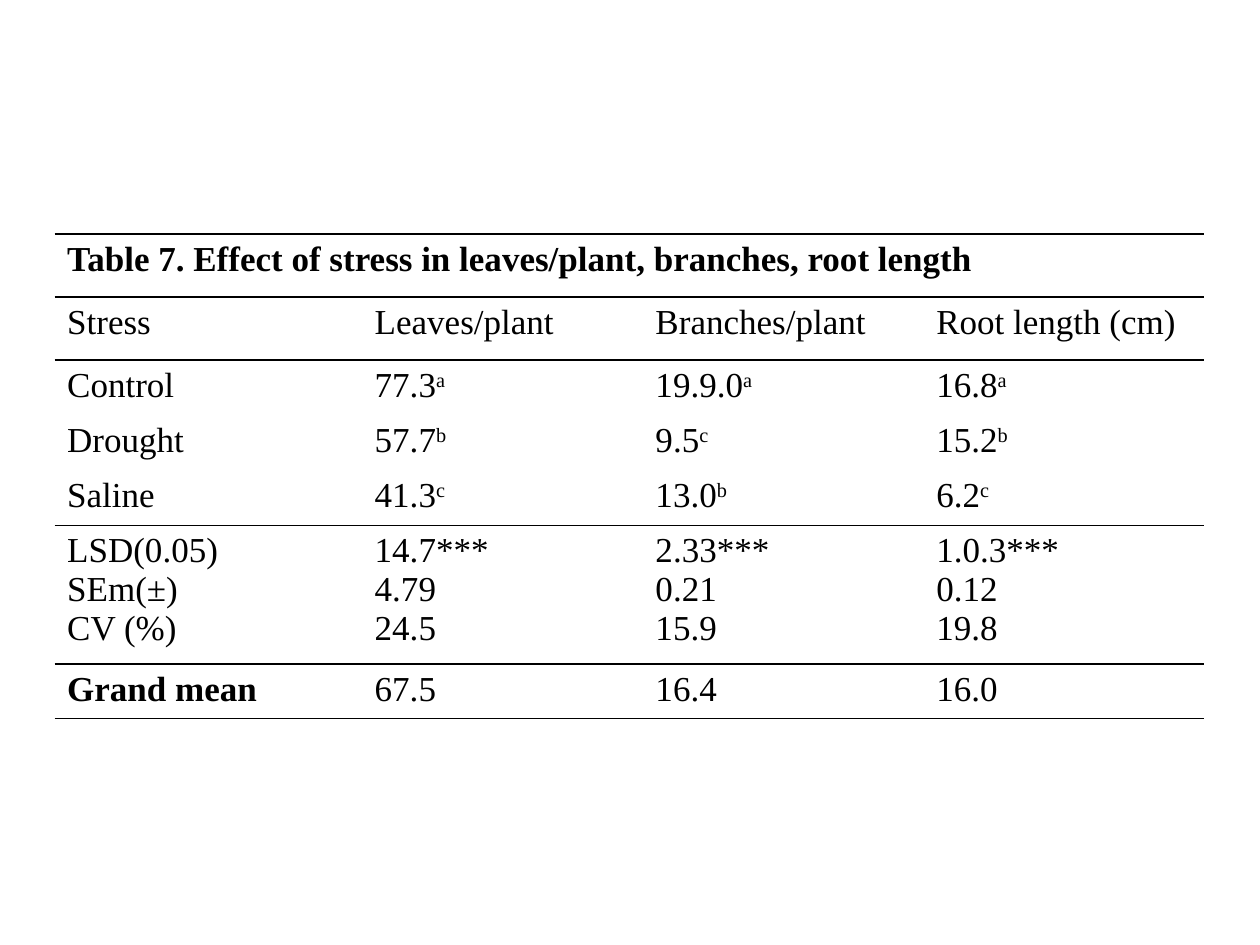
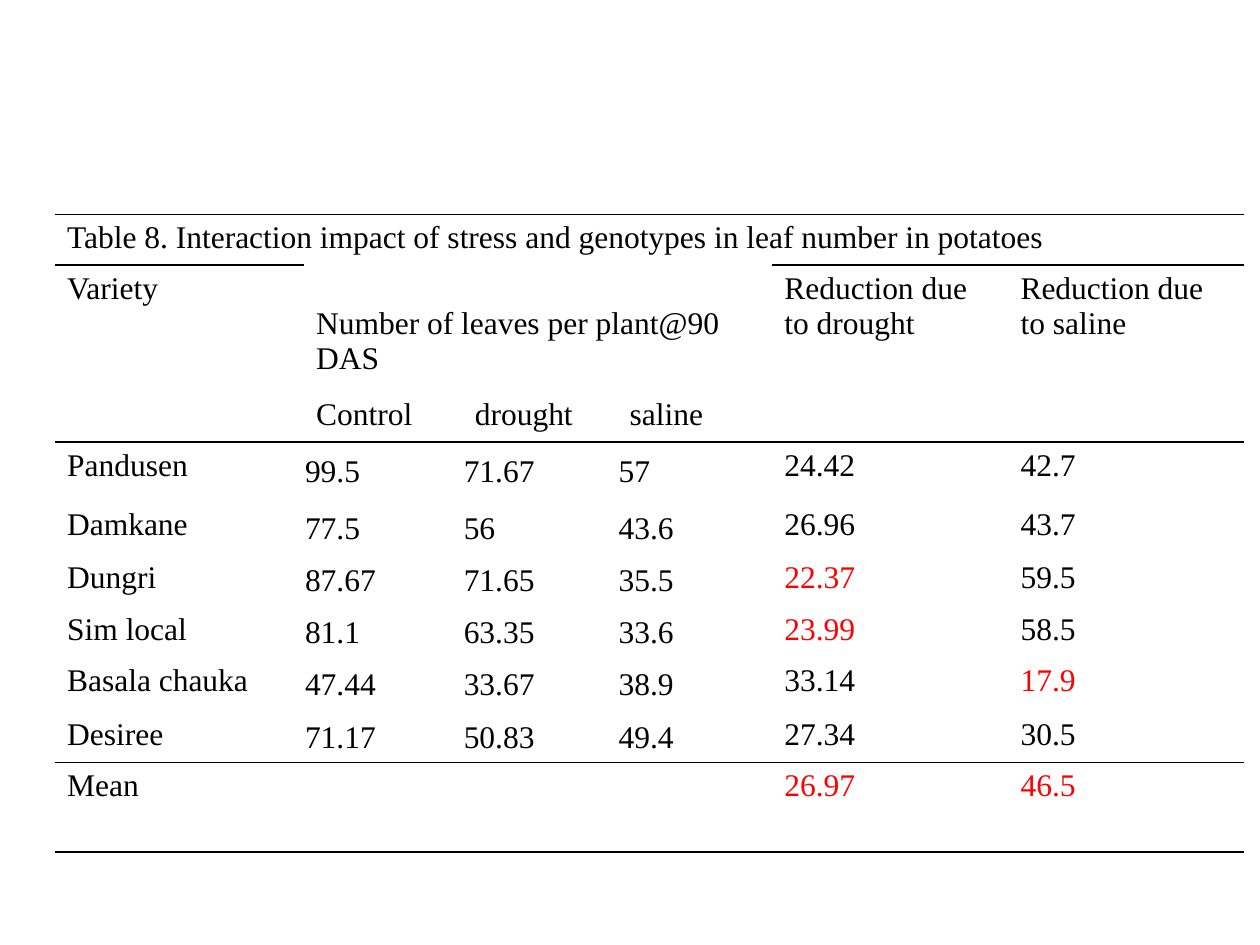
"""Build two slides of ruled result tables on potato stress trials."""
from dataclasses import dataclass, field

from lxml.etree import SubElement
from pptx import Presentation
from pptx.dml.color import RGBColor
from pptx.enum.text import MSO_ANCHOR, PP_ALIGN
from pptx.oxml.ns import qn
from pptx.util import Cm, Pt

FONT = "Times New Roman"
BLACK, RED = "000000", "FF0000"
NO_GRID_STYLE = "{2D5ABB26-0587-4C30-8999-92F81FD0307C}"
LEFT = 1.1


@dataclass
class RuledTable:
    top: float
    size: int
    widths: list[float]
    heights: list[float]
    rows: list[list[str]]
    rules: dict[int, list[int]]
    merges: list[tuple[int, int, int, int]]
    bold: set[tuple[int, int]] = field(default_factory=set)
    red: set[tuple[int, int]] = field(default_factory=set)


def rgb(color: str) -> RGBColor:
    return RGBColor.from_string(color)


def set_borders(cell, drawn: set[str]) -> None:
    tc_pr = cell._tc.get_or_add_tcPr()
    for side in ("lnL", "lnR", "lnT", "lnB"):
        ln = SubElement(tc_pr, qn(f"a:{side}"), w=str(Pt(1)))
        if side in drawn:
            fill = SubElement(ln, qn("a:solidFill"))
            SubElement(fill, qn("a:srgbClr"), val=BLACK)
        else:
            SubElement(ln, qn("a:noFill"))


def write_cell(cell, text: str, size: int, bold: bool, color: str) -> None:
    """Fill a cell, one paragraph per line; a caret starts a superscript."""
    tf = cell.text_frame
    for i, line in enumerate(text.split("\n")):
        p = tf.add_paragraph() if i else tf.paragraphs[0]
        p.font.name, p.font.size, p.font.bold = FONT, Pt(size), bold
        p.font.color.rgb = rgb(color)
        base, _, mark = line.partition("^")
        if base:
            p.add_run().text = base
        if mark:
            r = p.add_run()
            r.text = mark
            r._r.get_or_add_rPr().set("baseline", "30000")


def draw_table(prs, spec: RuledTable):
    s = prs.slides.add_slide(prs.slide_layouts[6])
    sp = s.shapes.add_table(len(spec.heights), len(spec.widths), Cm(LEFT), Cm(spec.top),
                            Cm(sum(spec.widths)), Cm(sum(spec.heights)))
    table = sp.table
    table.first_row = table.horz_banding = False
    table._tbl.tblPr.find(qn("a:tableStyleId")).text = NO_GRID_STYLE
    for column, width in zip(table.columns, spec.widths):
        column.width = Cm(width)
    for row, height in zip(table.rows, spec.heights):
        row.height = Cm(height)
    last = len(spec.rows) - 1
    for i, texts in enumerate(spec.rows):
        for j, text in enumerate(texts):
            cell = table.cell(i, j)
            drawn = {"lnT"} if j in spec.rules.get(i, []) else set()
            set_borders(cell, drawn | ({"lnB"} if i == last else set()))
            cell.fill.background()
            write_cell(cell, text, spec.size, (i, j) in spec.bold,
                       RED if (i, j) in spec.red else BLACK)
    for r1, c1, r2, c2 in spec.merges:
        table.cell(r1, c1).merge(table.cell(r2, c2))
    return table


def stress_slide(prs) -> None:
    every = list(range(4))
    draw_table(prs, RuledTable(
        top=4.72, size=20,
        widths=[6.2] + [5.66] * 3,
        heights=[1.27] * 2 + [1.11] * 3 + [2.8, 1.1],
        rows=[
            ["Table 7. Effect of stress in leaves/plant, branches, root length", "", "", ""],
            ["Stress", "Leaves/plant", "Branches/plant", "Root length (cm)"],
            ["Control", "77.3^a", "19.9.0^a", "16.8^a"],
            ["Drought", "57.7^b", "9.5^c", "15.2^b"],
            ["Saline", "41.3^c", "13.0^b", "6.2^c"],
            ["LSD(0.05)\nSEm(±)\nCV (%)", "14.7***\n4.79\n24.5",
             "2.33***\n0.21\n15.9", "1.0.3***\n0.12\n19.8"],
            ["Grand mean", "67.5", "16.4", "16.0"],
        ],
        rules={i: every for i in (0, 1, 2, 5, 6)},
        merges=[(0, 0, 0, 3)],
        bold={(0, 0), (6, 0)},
    ))


def genotype_slide(prs) -> None:
    every = list(range(6))
    first_data, mean = 3, 9
    table = draw_table(prs, RuledTable(
        top=4.32, size=18,
        widths=[5.02, 3.2, 3.12, 3.12, 4.76, 4.76],
        heights=[1.02, 2.54, 1.03, 1.19, 1.07, 1.05, 1.03, 1.09, 1.03, 1.81],
        rows=[
            ["Table 8. Interaction impact of stress and genotypes in leaf number in potatoes"]
            + [""] * 5,
            ["Variety", "Number of leaves per plant@90 DAS", "", "",
             "Reduction due to drought", "Reduction due to saline"],
            ["", "Control", "drought", "saline", "", ""],
            ["Pandusen", "99.5", "71.67", "57", "24.42", "42.7"],
            ["Damkane", "77.5", "56", "43.6", "26.96", "43.7"],
            ["Dungri", "87.67", "71.65", "35.5", "22.37", "59.5"],
            ["Sim local", "81.1", "63.35", "33.6", "23.99", "58.5"],
            ["Basala chauka", "47.44", "33.67", "38.9", "33.14", "17.9"],
            ["Desiree", "71.17", "50.83", "49.4", "27.34", "30.5"],
            ["Mean", "", "", "", "26.97", "46.5"],
        ],
        rules={0: every, 1: [0, 4, 5], first_data: every, mean: every},
        merges=[(0, 0, 0, 5), (1, 1, 1, 3)] + [(1, j, 2, j) for j in (0, 4, 5)],
        red={(5, 4), (6, 4), (7, 5), (mean, 4), (mean, 5)},
    ))
    table.cell(1, 1).margin_top = Cm(0.83)
    for i in range(first_data, mean + 1):
        for j in range(1, 6):
            cell = table.cell(i, j)
            cell.text_frame.paragraphs[0].alignment = PP_ALIGN.JUSTIFY
            if j < 4 and i < mean:
                cell.vertical_anchor = MSO_ANCHOR.MIDDLE
                cell.margin_left = cell.margin_right = cell.margin_top = Cm(0.03)
                cell.margin_bottom = 0


def main() -> None:
    prs = Presentation()
    prs.slide_width, prs.slide_height = Cm(25.4), Cm(19.05)
    stress_slide(prs)
    genotype_slide(prs)
    prs.save("out.pptx")


if __name__ == "__main__":
    main()
